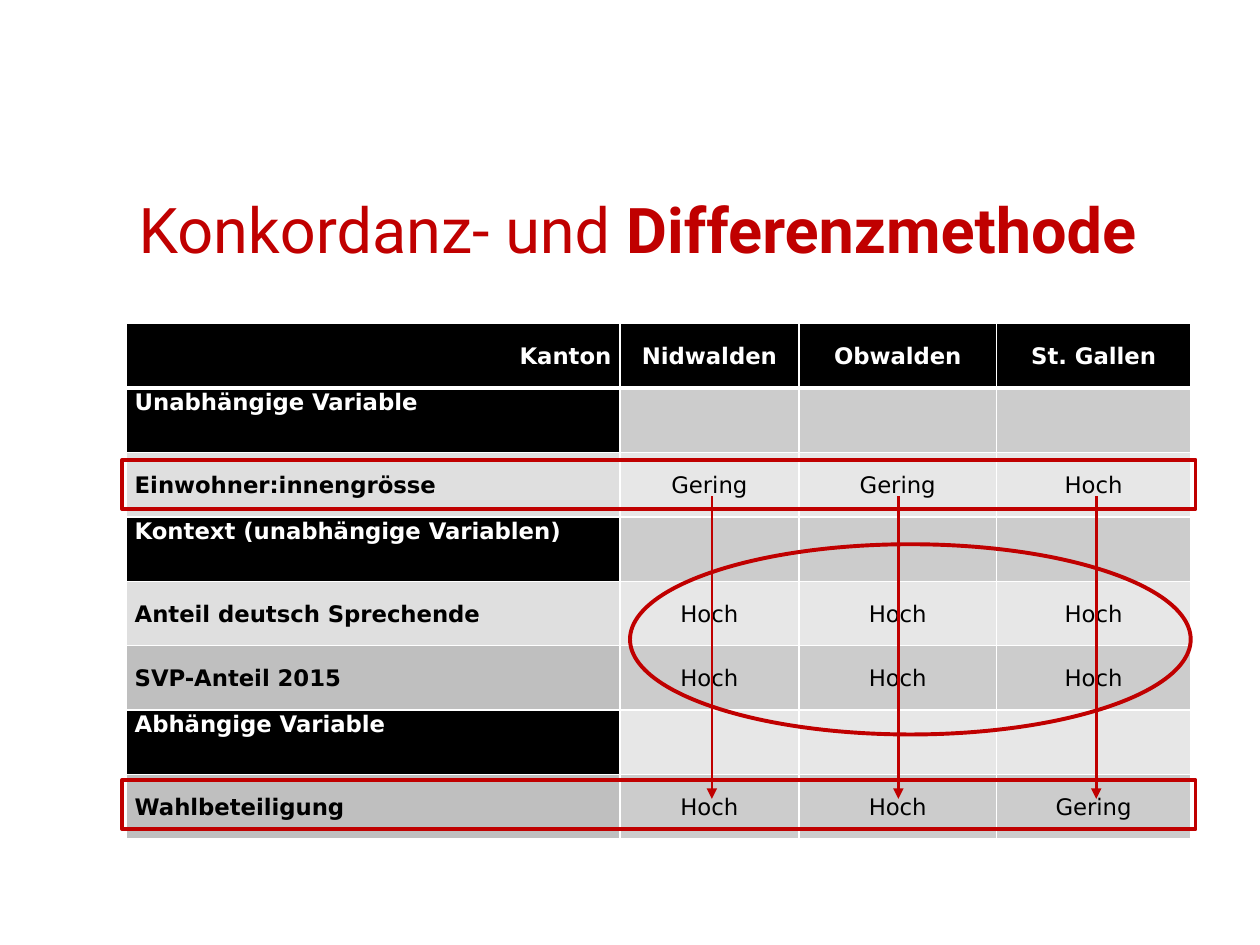
from lxml import etree
from pptx import Presentation
from pptx import util as u
from pptx.dml.color import RGBColor
from pptx.enum import shapes, text
from pptx.oxml import ns

HEX = {"red": "C00000", "black": "000000", "white": "FFFFFF",
       "dark": "CCCCCC", "light": "E7E7E7",
       "darkkey": "BFBFBF", "lightkey": "DFDFDF"}

ROWS = [
    ("Kanton", "Nidwalden", "Obwalden", "St. Gallen"),
    ("Unabhängige Variable",),
    ("Einwohner:innengrösse", "Gering", "Gering", "Hoch"),
    ("Kontext (unabhängige Variablen)",),
    ("Anteil deutsch Sprechende", "Hoch", "Hoch", "Hoch"),
    ("SVP-Anteil 2015", "Hoch", "Hoch", "Hoch"),
    ("Abhängige Variable",),
    ("Wahlbeteiligung", "Hoch", "Hoch", "Gering"),
]
WIDTHS = (282.24, 102.24, 113.04, 110.88)
HIGH = 36.8


class Deck:
    head, body = "Roboto", "DejaVu Sans"

    def __init__(self):
        self.prs = Presentation()
        self.prs.slide_width, self.prs.slide_height = u.Pt(720), u.Pt(540)
        self.slide = self.prs.slides.add_slide(self.prs.slide_layouts[5])

    def color(self, name):
        return RGBColor.from_string(HEX[name])

    def font(self, font, face, size, name, bold=False):
        font.name, font.size, font.bold = face, u.Pt(size), bold
        font.color.rgb = self.color(name)

    def title(self, box, parts):
        shape = self.slide.shapes.title
        shape.left, shape.top, shape.width, shape.height = map(u.Pt, box)
        frame = shape.text_frame
        frame.vertical_anchor = text.MSO_ANCHOR.BOTTOM
        para = frame.paragraphs[0]
        para.alignment = text.PP_ALIGN.LEFT
        for words, bold in parts:
            run = para.add_run()
            run.text = words
            self.font(run.font, self.head, 36, "red", bold)

    def border(self, cell, top, bottom):
        props = cell._tc.get_or_add_tcPr()
        sides = (("lnL", 1), ("lnR", 1), ("lnT", top), ("lnB", bottom))
        for at, (tag, size) in enumerate(sides):
            line = etree.Element(ns.qn("a:" + tag), w=str(u.Pt(size)))
            fill = etree.SubElement(line, ns.qn("a:solidFill"))
            etree.SubElement(fill, ns.qn("a:srgbClr"), val=HEX["white"])
            props.insert(at, line)

    def label(self, cell, words, align, name, bold):
        cell.margin_left = cell.margin_right = u.Pt(5)
        cell.margin_top = cell.margin_bottom = 0
        para = cell.text_frame.paragraphs[0]
        para.text = words
        para.alignment = align
        para.line_spacing, para.space_after = 1.07, u.Pt(6)
        self.font(para.font, self.body, 13, name, bold)

    def table(self, left, top, rows, widths, high):
        box = map(u.Pt, (left, top, sum(widths), high * len(rows)))
        grid = self.slide.shapes.add_table(len(rows), len(widths), *box).table
        for col, wide in zip(grid.columns, widths):
            col.width = u.Pt(wide)
        for r, row in enumerate(rows):
            grid.rows[r].height = u.Pt(high)
            shade = "dark" if r % 2 else "light"
            group = len(row) == 1
            for c in range(len(widths)):
                cell = grid.cell(r, c)
                black = r == 0 or (group and c == 0)
                fill = "black" if black else shade + ("" if c else "key")
                cell.fill.solid()
                cell.fill.fore_color.rgb = self.color(fill)
                cell.vertical_anchor = (text.MSO_ANCHOR.TOP if group
                                        else text.MSO_ANCHOR.MIDDLE)
                if c < len(row):
                    align = (text.PP_ALIGN.CENTER if c else
                             text.PP_ALIGN.JUSTIFY if r else
                             text.PP_ALIGN.RIGHT)
                    self.label(cell, row[c], align,
                               "white" if black else "black",
                               r == 0 or c == 0)
                self.border(cell, 3 if r == 1 else 1, 3 if r == 0 else 1)

    def frame(self, kind, *box):
        shape = self.slide.shapes.add_shape(kind, *map(u.Pt, box))
        shape.shadow.inherit = False
        shape.fill.background()
        shape.line.color.rgb = self.color("red")
        shape.line.width = u.Pt(2.25)

    def arrow(self, x, top, end):
        wire = self.slide.shapes.add_connector(
            shapes.MSO_CONNECTOR.STRAIGHT, *map(u.Pt, (x, top, x, end)))
        wire.line.color.rgb = self.color("red")
        wire.line.width = u.Pt(1.5)
        props = wire._element.spPr
        etree.SubElement(props.find(ns.qn("a:ln")), ns.qn("a:tailEnd"),
                         type="triangle")
        etree.SubElement(props, ns.qn("a:effectLst"))


def main():
    deck = Deck()
    deck.title((72, 65.5, 627.84, 90),
               [("Konkordanz- und ", False), ("Differenzmethode", True)])
    deck.table(72, 185, ROWS, WIDTHS, HIGH)
    for top in (445.7, 262.8):
        deck.frame(shapes.MSO_SHAPE.RECTANGLE, 69.8, top, 613.4, 28.1)
    deck.frame(shapes.MSO_SHAPE.OVAL, 360, 311, 320.4, 108.7)
    for x in (406.8, 513.4, 626.4):
        deck.arrow(x, 283.7, 456.5)
    deck.prs.save("out.pptx")


if __name__ == "__main__":
    main()
